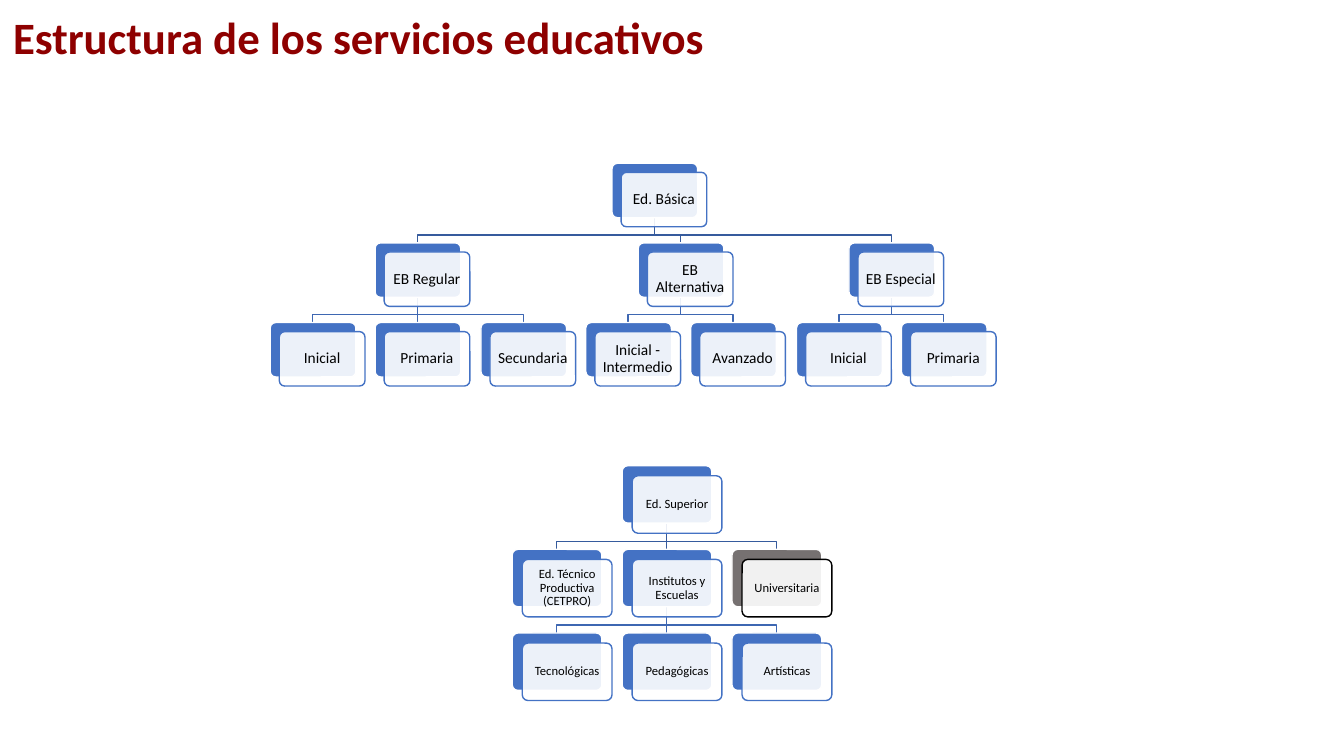
from typing import NamedTuple

from lxml import etree
from pptx import Presentation
from pptx.dml.color import RGBColor
from pptx.enum.shapes import MSO_CONNECTOR, MSO_SHAPE
from pptx.enum.text import MSO_ANCHOR, MSO_AUTO_SIZE, PP_ALIGN
from pptx.oxml.ns import qn
from pptx.util import Emu, Pt

ROUNDED = MSO_SHAPE.ROUNDED_RECTANGLE
STRAIGHT = MSO_CONNECTOR.STRAIGHT
LEFT, CENTER = PP_ALIGN.LEFT, PP_ALIGN.CENTER
TOP, MIDDLE = MSO_ANCHOR.TOP, MSO_ANCHOR.MIDDLE
NO_AUTOFIT = MSO_AUTO_SIZE.NONE

EMU_PER_PX = 9144  # 100 px to the inch
FONT = "Calibri"
BLUE, GREY, WHITE, BLACK, DARK_RED = "4472C4", "767171", "FFFFFF", "000000", "8E0000"
LINK_COLORS = ["365B9D", "3E67B2"]  # by depth of the parent
BUS_GAP = 8  # from the horizontal run of a link down to the child


class Node(NamedTuple):
    label: str
    column: float
    children: tuple = ()
    back: str = BLUE
    border: str = BLUE


class Grid(NamedTuple):
    left: int
    top: int
    column_step: float
    row_step: int
    width: int
    height: int
    offset: int
    margin: int
    size: int

    def corner(self, node, depth):
        return (round(self.left + node.column * self.column_step),
                self.top + depth * self.row_step)


BASIC = Node("Ed. Básica", 3.25, (
    Node("EB Regular", 1, (
        Node("Inicial", 0), Node("Primaria", 1), Node("Secundaria", 2))),
    Node("EB Alternativa", 3.5, (
        Node("Inicial - Intermedio", 3), Node("Avanzado", 4))),
    Node("EB Especial", 5.5, (
        Node("Inicial", 5), Node("Primaria", 6))),
))
BASIC_GRID = Grid(left=268, top=162, column_step=104.33, row_step=79,
                  width=85, height=54, offset=9, margin=5, size=11)

HIGHER = Node("Ed. Superior", 1, (
    Node("Ed. Técnico Productiva (CETPRO)", 0),
    Node("Institutos y Escuelas", 1, (
        Node("Tecnológicas", 0), Node("Pedagógicas", 1), Node("Artísticas", 2))),
    Node("Universitaria", 2, back=GREY, border=BLACK),
))
HIGHER_GRID = Grid(left=508, top=462, column_step=109, row_step=83,
                   width=89, height=57, offset=10, margin=4, size=9)


def px(value):
    return Emu(value * EMU_PER_PX)


def rgb(color):
    return RGBColor.from_string(color)


def write(shape, text, *, size, color, bold=False, align=LEFT, anchor=TOP,
          margins=(0, 0), spacing=1.0):
    """Put one formatted paragraph in a shape; margins are (sides, top and bottom)."""
    frame = shape.text_frame
    frame.word_wrap = True
    frame.auto_size = NO_AUTOFIT
    frame.vertical_anchor = anchor
    frame.margin_left = frame.margin_right = px(margins[0])
    frame.margin_top = frame.margin_bottom = px(margins[1])
    para = frame.paragraphs[0]
    para.alignment = align
    para.line_spacing = spacing
    span = para.add_run()
    span.text = text
    span.font.name = FONT
    span.font.size = Pt(size)
    span.font.bold = bold
    span.font.color.rgb = rgb(color)


def set_line(shape, color):
    shape.line.color.rgb = rgb(color)
    shape.line.width = Pt(1)


def set_opacity(shape, percent):
    fill_color = shape.fill._xPr.find(qn("a:solidFill"))[0]
    etree.SubElement(fill_color, qn("a:alpha"), val=str(percent * 1000))


def add_card(shapes, left, top, width, height, fill, border):
    card = shapes.add_shape(ROUNDED, px(left), px(top), px(width), px(height))
    card.adjustments[0] = 0.1
    card.shadow.inherit = False
    card.fill.solid()
    card.fill.fore_color.rgb = rgb(fill)
    set_line(card, border)
    return card


def add_link(shapes, start, end, color):
    """Join a parent to a child: straight down, or by an elbow."""
    (x1, y1), (x2, y2) = start, end
    if x1 == x2:
        link = shapes.add_connector(STRAIGHT, px(x1), px(y1), px(x2), px(y2))
        set_line(link, color)
        etree.SubElement(link._element.spPr, qn("a:effectLst"))
        return
    bus = y2 - BUS_GAP
    builder = shapes.build_freeform(x1, y1, scale=EMU_PER_PX)
    builder.add_line_segments([(x1, bus), (x2, bus), (x2, y2)], close=False)
    link = builder.convert_to_shape()
    link.fill.background()
    link.shadow.inherit = False
    set_line(link, color)


def add_links(shapes, grid, node, depth=0):
    left, top = grid.corner(node, depth)
    middle = grid.width // 2
    for child in node.children:
        child_left, child_top = grid.corner(child, depth + 1)
        add_link(shapes, (left + middle, top + grid.height),
                 (child_left + middle, child_top), LINK_COLORS[depth])
        add_links(shapes, grid, child, depth + 1)


def add_nodes(shapes, grid, node, depth=0):
    left, top = grid.corner(node, depth)
    add_card(shapes, left, top, grid.width, grid.height, node.back, WHITE)
    front = add_card(shapes, left + grid.offset, top + grid.offset,
                     grid.width, grid.height, WHITE, node.border)
    set_opacity(front, 90)
    write(front, node.label, size=grid.size, color=BLACK, align=CENTER,
          anchor=MIDDLE, margins=(grid.margin, grid.margin), spacing=0.9)
    for child in node.children:
        add_nodes(shapes, grid, child, depth + 1)


def add_tree(page, grid, root):
    group = page.shapes.add_group_shape()
    add_links(group.shapes, grid, root)
    add_nodes(group.shapes, grid, root)


def add_title(page, text):
    title = page.shapes.title
    title.left, title.top, title.width, title.height = map(px, (0, 3, 773, 53))
    write(title, text, size=32, color=DARK_RED, bold=True, margins=(13, 7))


def main():
    deck = Presentation()
    deck.slide_width, deck.slide_height = px(1333), px(750)
    page = deck.slides.add_slide(deck.slide_layouts.get_by_name("Title Only"))
    add_title(page, "Estructura de los servicios educativos")
    add_tree(page, BASIC_GRID, BASIC)
    add_tree(page, HIGHER_GRID, HIGHER)
    deck.save("out.pptx")


if __name__ == "__main__":
    main()
